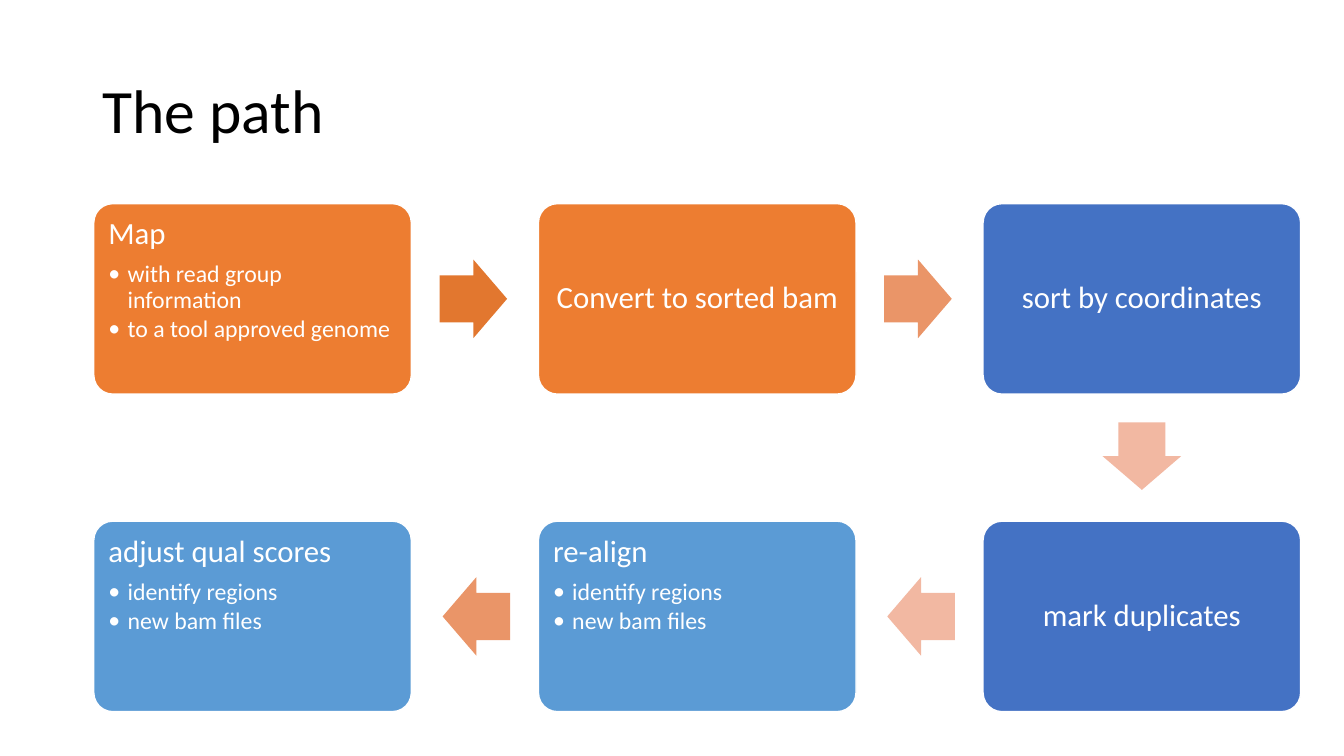
import pptx
import pptx.util
from lxml import etree
from pptx.dml.color import RGBColor
from pptx.enum.shapes import MSO_SHAPE
from pptx.enum.text import MSO_ANCHOR, PP_ALIGN
from pptx.oxml.ns import qn
from pptx.util import Inches, Pt

BLACK = RGBColor(0x00, 0x00, 0x00)
WHITE = RGBColor(0xFF, 0xFF, 0xFF)
ORANGE = RGBColor(0xED, 0x7D, 0x31)
BLUE = RGBColor(0x44, 0x72, 0xC4)
LIGHT_BLUE = RGBColor(0x5B, 0x9B, 0xD5)
ARROW_DARK = RGBColor(0xE2, 0x77, 0x2F)
ARROW_MID = RGBColor(0xEA, 0x95, 0x68)
ARROW_PALE = RGBColor(0xF2, 0xB8, 0xA2)
FONT = "Calibri"

TITLE = "The path"
# heading, bullets, fill, (column, row)
STEPS = [
    ("Map", ["with read group information", "to a tool approved genome"], ORANGE, (0, 0)),
    ("Convert to sorted bam", [], ORANGE, (1, 0)),
    ("sort by coordinates", [], BLUE, (2, 0)),
    ("mark duplicates", [], BLUE, (2, 1)),
    ("re-align", ["identify regions", "new bam files"], LIGHT_BLUE, (1, 1)),
    ("adjust qual scores", ["identify regions", "new bam files"], LIGHT_BLUE, (0, 1)),
]
ARROWS = [ARROW_DARK, ARROW_MID, ARROW_PALE, ARROW_PALE, ARROW_MID]
ROTATION = {(1, 0): 0, (0, 1): 90, (-1, 0): 180}

LEFT, TOP = 0.93, 2.02
BOX_W, BOX_H = 3.15, 1.89
COL_STEP, ROW_STEP = 4.41, 3.15
ARROW_W, ARROW_H, ARROW_GAP = 0.67, 0.78, 0.28


def style(p, size, color, space_after=0):
    p.font.name, p.font.size = FONT, Pt(size)
    p.font.color.rgb = color
    p.line_spacing = 0.9
    p.space_after = Pt(size * space_after)


def add_bullet(p):
    pPr = p._p.get_or_add_pPr()
    pPr.set("marL", str(Inches(0.19)))
    pPr.set("indent", str(-Inches(0.19)))
    font = etree.Element(qn("a:buFont"), typeface=FONT)
    bullet = etree.Element(qn("a:buChar"), char="•")
    for element in (font, bullet):
        pPr.insert_element_before(element, "a:tabLst", "a:defRPr", "a:extLst")


def add_box(s, heading, bullets, fill, cell):
    col, row = cell
    box = s.shapes.add_shape(
        MSO_SHAPE.ROUNDED_RECTANGLE, Inches(LEFT + col * COL_STEP),
        Inches(TOP + row * ROW_STEP), Inches(BOX_W), Inches(BOX_H))
    box.adjustments[0] = 0.1
    box.shadow.inherit = False
    box.fill.solid()
    box.fill.fore_color.rgb = fill
    box.line.color.rgb = WHITE
    box.line.width = Pt(1)
    tf = box.text_frame
    tf.word_wrap = True
    tf.margin_left = tf.margin_right = tf.margin_top = tf.margin_bottom = Inches(0.09)
    tf.vertical_anchor = MSO_ANCHOR.TOP if bullets else MSO_ANCHOR.MIDDLE
    p = tf.paragraphs[0]
    p.text = heading
    p.alignment = PP_ALIGN.LEFT if bullets else PP_ALIGN.CENTER
    style(p, 22, WHITE, 0.35)
    for text in bullets:
        p = tf.add_paragraph()
        p.text = text
        p.alignment = PP_ALIGN.LEFT
        p.level = 1
        style(p, 17, WHITE, 0.15)
        add_bullet(p)


def add_arrow(s, start, end, fill):
    """Place an arrow a fixed gap past the start box, pointing to the end box."""
    dx, dy = end[0] - start[0], end[1] - start[1]
    reach = ARROW_GAP + ARROW_W / 2
    cx = LEFT + start[0] * COL_STEP + BOX_W / 2 + dx * (BOX_W / 2 + reach)
    cy = TOP + start[1] * ROW_STEP + BOX_H / 2 + dy * (BOX_H / 2 + reach)
    arrow = s.shapes.add_shape(
        MSO_SHAPE.RIGHT_ARROW, Inches(cx - ARROW_W / 2), Inches(cy - ARROW_H / 2),
        Inches(ARROW_W), Inches(ARROW_H))
    arrow.adjustments[0], arrow.adjustments[1] = 0.6, 0.5
    arrow.rotation = ROTATION[dx, dy]
    arrow.shadow.inherit = False
    arrow.fill.solid()
    arrow.fill.fore_color.rgb = fill
    arrow.line.fill.background()


def main():
    prs = pptx.Presentation()
    prs.slide_width, prs.slide_height = Inches(13.33), Inches(7.5)
    s = prs.slides.add_slide(prs.slide_layouts[6])

    title = s.shapes.add_textbox(Inches(0.92), Inches(0.4), Inches(11.5), Inches(1.45))
    tf = title.text_frame
    tf.word_wrap = True
    tf.vertical_anchor = MSO_ANCHOR.MIDDLE
    tf.paragraphs[0].text = TITLE
    style(tf.paragraphs[0], 44, BLACK)

    for step in STEPS:
        add_box(s, *step)
    cells = [step[-1] for step in STEPS]
    for start, end, fill in zip(cells, cells[1:], ARROWS):
        add_arrow(s, start, end, fill)
    prs.save("out.pptx")


if __name__ == "__main__":
    main()
